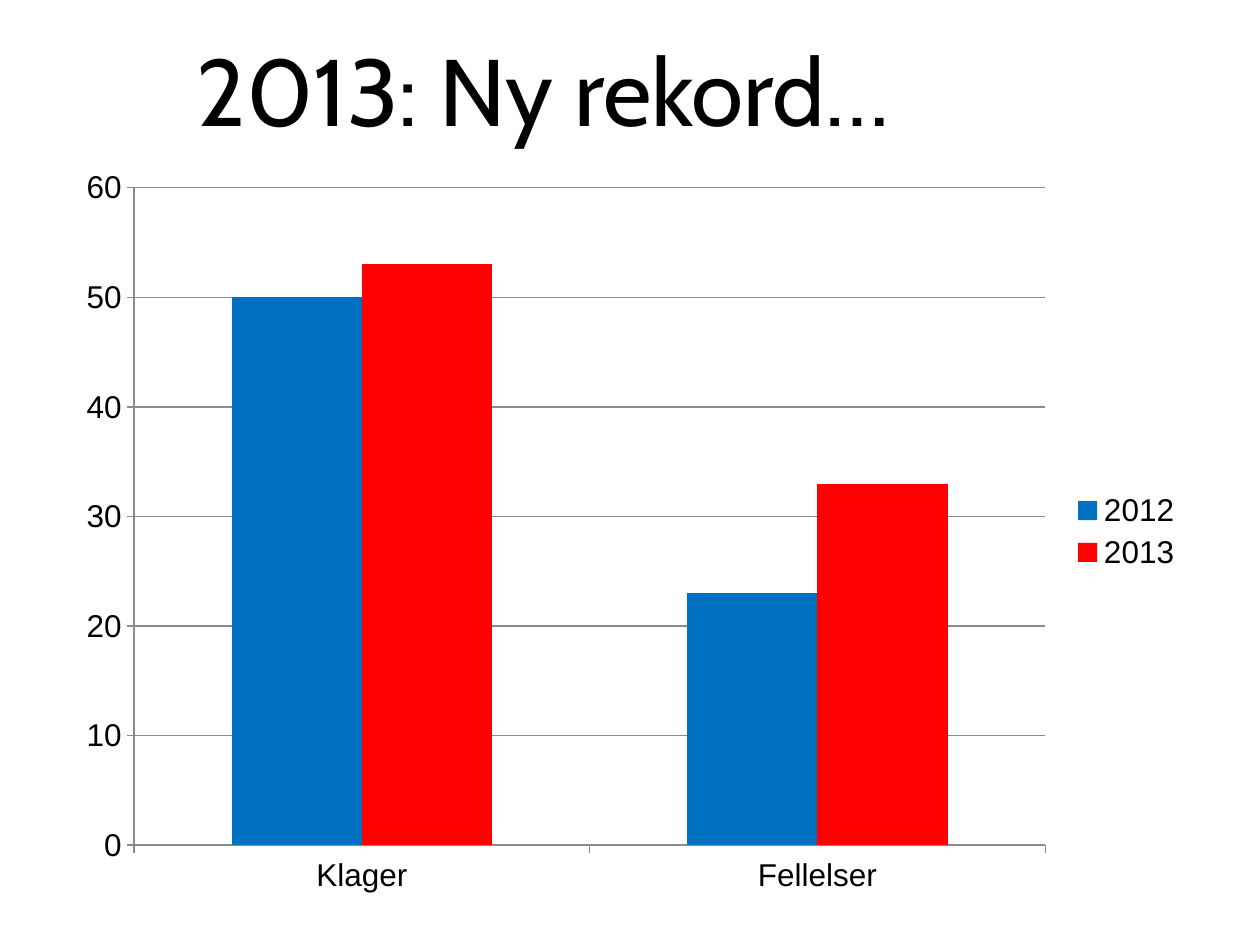
from pptx import Presentation
from pptx.chart.data import CategoryChartData
from pptx.dml.color import RGBColor
from pptx.enum.chart import XL_CHART_TYPE as ChartType, XL_LEGEND_POSITION as LegendPos, XL_TICK_MARK as Tick
from pptx.enum.text import MSO_ANCHOR as Anchor, MSO_AUTO_SIZE as AutoSize, PP_ALIGN as Align
from pptx.util import Emu, Pt

TITLE = "2013: Ny rekord…"
CATEGORIES = ["Klager", "Fellelser"]
SERIES = [
    ("2012", (50, 23), "0070C0"),
    ("2013", (53, 33), "FF0000"),
]
SLIDE_SIZE = (1260, 945)
TITLE_BOX = (184, 26, 776, 127)
CHART_BOX = (64, 155, 1131, 753)
BLACK, GREY = "000000", "8B8B8B"


def px(n):
    return Emu(round(n * 914400 / 126))


def color(value):
    return RGBColor.from_string(value)


def style_font(font, name, size):
    font.name, font.size, font.bold = name, Pt(size), False
    font.color.rgb = color(BLACK)


def style_line(line):
    line.color.rgb = color(GREY)
    line.width = Pt(0.75)


def add_title(slide):
    title = slide.shapes.title
    title.left, title.top, title.width, title.height = map(px, TITLE_BOX)
    tf = title.text_frame
    tf.text = TITLE
    tf.word_wrap = False
    tf.auto_size = AutoSize.SHAPE_TO_FIT_TEXT
    tf.vertical_anchor = Anchor.TOP
    p = tf.paragraphs[0]
    p.alignment = Align.LEFT
    style_font(p.runs[0].font, "Cabin", 54)


def add_complaints_chart(slide):
    data = CategoryChartData()
    data.categories = CATEGORIES
    for name, values, _ in SERIES:
        data.add_series(name, values)
    chart = slide.shapes.add_chart(
        ChartType.COLUMN_CLUSTERED, *map(px, CHART_BOX), data).chart
    chart.has_title = False
    style_font(chart.font, "Arial", 18)

    plot = chart.plots[0]
    plot.gap_width, plot.overlap, plot.vary_by_categories = 150, 0, False
    for series, (_, _, fill) in zip(plot.series, SERIES):
        series.format.fill.solid()
        series.format.fill.fore_color.rgb = color(fill)

    for axis in (chart.category_axis, chart.value_axis):
        axis.major_tick_mark, axis.minor_tick_mark = Tick.OUTSIDE, Tick.NONE
        style_line(axis.format.line)
    axis = chart.value_axis
    axis.minimum_scale, axis.maximum_scale, axis.major_unit = 0, 60, 10
    style_line(axis.major_gridlines.format.line)

    chart.has_legend = True
    chart.legend.position = LegendPos.RIGHT
    chart.legend.include_in_layout = False


def main():
    prs = Presentation()
    prs.slide_width, prs.slide_height = map(px, SLIDE_SIZE)
    slide = prs.slides.add_slide(prs.slide_layouts.get_by_name("Title Only"))
    add_complaints_chart(slide)
    add_title(slide)
    prs.save("out.pptx")


if __name__ == "__main__":
    main()
